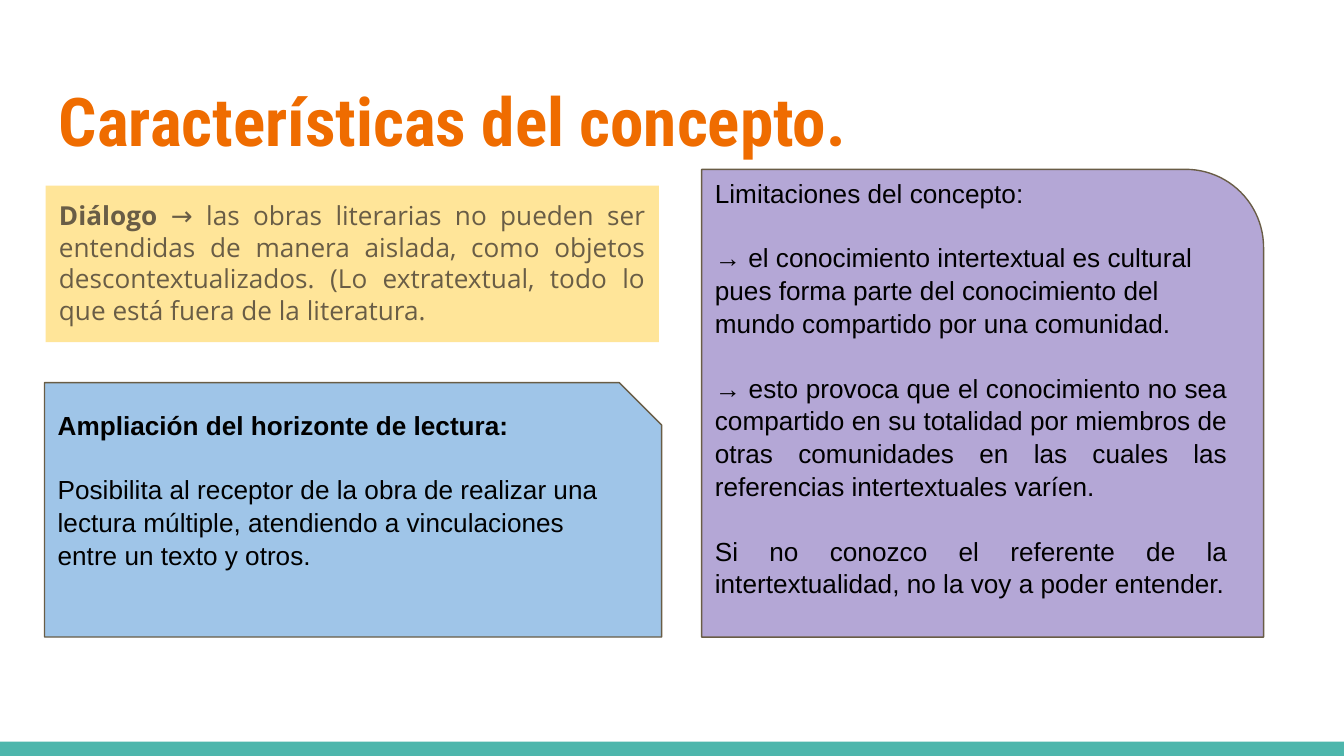
from dataclasses import dataclass

from pptx import Presentation
from pptx.dml.color import RGBColor
from pptx.enum.shapes import MSO_SHAPE as Shape
from pptx.enum.text import MSO_ANCHOR as Anchor, PP_ALIGN as Align
from pptx.util import Pt


@dataclass(frozen=True)
class Theme:
    teal: str = "4DB6AC"
    orange: str = "EF6C00"
    yellow: str = "FFE599"
    blue: str = "9FC5E8"
    purple: str = "B4A7D6"
    brown: str = "695D46"
    black: str = "000000"
    title_size: int = 36
    body_size: int = 14
    line_height: float = 16.8
    inset: float = 7.2


theme = Theme()


def add_panel(kind, box, fill, outline=None):
    panel = slide.shapes.add_shape(kind, *map(Pt, box))
    panel.shadow.inherit = False
    panel.fill.solid()
    panel.fill.fore_color.rgb = RGBColor.from_string(fill)
    if outline:
        panel.line.color.rgb = RGBColor.from_string(outline)
        panel.line.width = Pt(0.75)
    else:
        panel.line.fill.background()
    return panel


def write(shape, paragraphs, font, size, color, anchor=Anchor.TOP, spacing=1.0,
          gap=0, bottom=theme.inset):
    """Fill a shape with (alignment, bold text, regular text) paragraphs."""
    frame = shape.text_frame
    frame.word_wrap = True
    frame.vertical_anchor = anchor
    frame.margin_left = frame.margin_top = frame.margin_right = Pt(theme.inset)
    frame.margin_bottom = Pt(bottom)
    for index, (align, strong, plain) in enumerate(paragraphs):
        paragraph = frame.add_paragraph() if index else frame.paragraphs[0]
        paragraph.alignment = align
        paragraph.line_spacing = spacing
        paragraph.space_before = Pt(gap if index else 0)
        for text, bold in ((strong, True), (plain, False)):
            if text:
                run = paragraph.add_run()
                run.text = text
                run.font.name = font
                run.font.size = Pt(size)
                run.font.bold = bold
                run.font.color.rgb = RGBColor.from_string(color)


prs = Presentation()
prs.slide_width, prs.slide_height = Pt(720), Pt(405)
slide = prs.slides.add_slide(prs.slide_layouts[6])

add_panel(Shape.RECTANGLE, (0, 397.4, 720, 7.6), theme.teal)

title = slide.shapes.add_textbox(Pt(24.5), Pt(35.3), Pt(671), Pt(55.4))
write(title, [(Align.LEFT, "Características del concepto.", "")],
      "Roboto Condensed", theme.title_size, theme.orange)

dialogue = add_panel(Shape.RECTANGLE, (24.5, 99.5, 328.5, 83.8), theme.yellow)
write(dialogue, [(
    Align.JUSTIFY, "Diálogo",
    " → las obras literarias no pueden ser entendidas de manera aislada, como objetos "
    "descontextualizados. (Lo extratextual, todo lo que está fuera de la literatura.",
)], "Open Sans", theme.body_size, theme.brown, spacing=1.01)

horizon = [
    (Align.LEFT, "Ampliación del horizonte de lectura:", ""),
    (Align.LEFT, "", "Posibilita al receptor de la obra de realizar una lectura múltiple, "
     "atendiendo a vinculaciones entre un texto y otros."),
]
limits = [
    (Align.LEFT, "", "Limitaciones del concepto:"),
    (Align.LEFT, "", "→ el conocimiento intertextual es cultural pues forma parte del "
     "conocimiento del mundo compartido por una comunidad."),
    (Align.JUSTIFY, "", "→ esto provoca que el conocimiento no sea compartido en su totalidad "
     "por miembros de otras comunidades en las cuales las referencias intertextuales varíen."),
    (Align.JUSTIFY, "", "Si no conozco el referente de la intertextualidad, "
     "no la voy a poder entender."),
]

# The last value is how many lines of room stay free below the text.
for kind, box, fill, paragraphs, free_lines in (
    (Shape.SNIP_1_RECTANGLE, (23.8, 205, 330.6, 136.3), theme.blue, horizon, 2),
    (Shape.ROUND_1_RECTANGLE, (375.9, 90.7, 301, 250.6), theme.purple, limits, 1),
):
    panel = add_panel(kind, box, fill, theme.brown)
    write(panel, paragraphs, "Arial", theme.body_size, theme.black, Anchor.MIDDLE,
          spacing=1.05, gap=theme.line_height,
          bottom=theme.inset + free_lines * theme.line_height)

prs.save("out.pptx")
